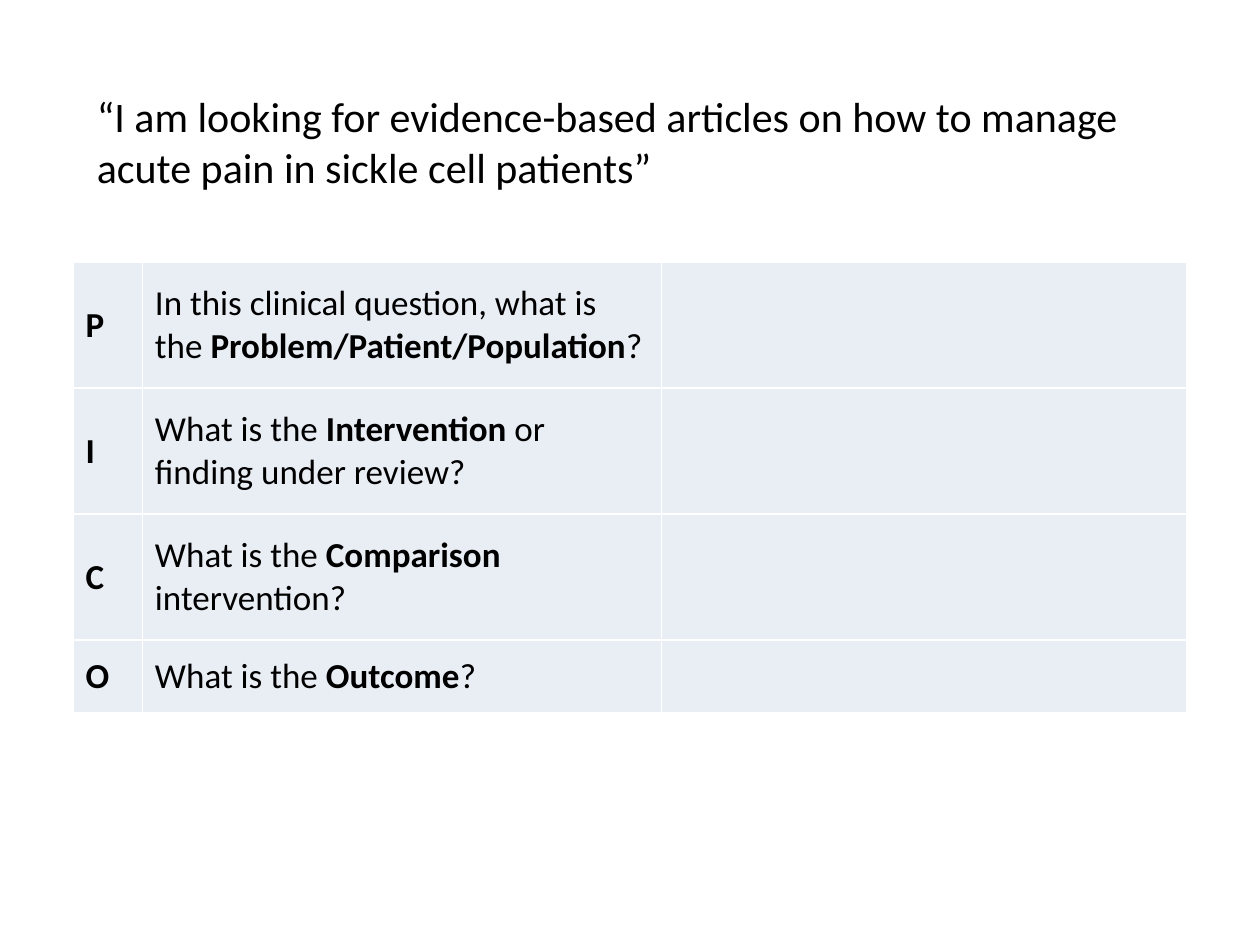
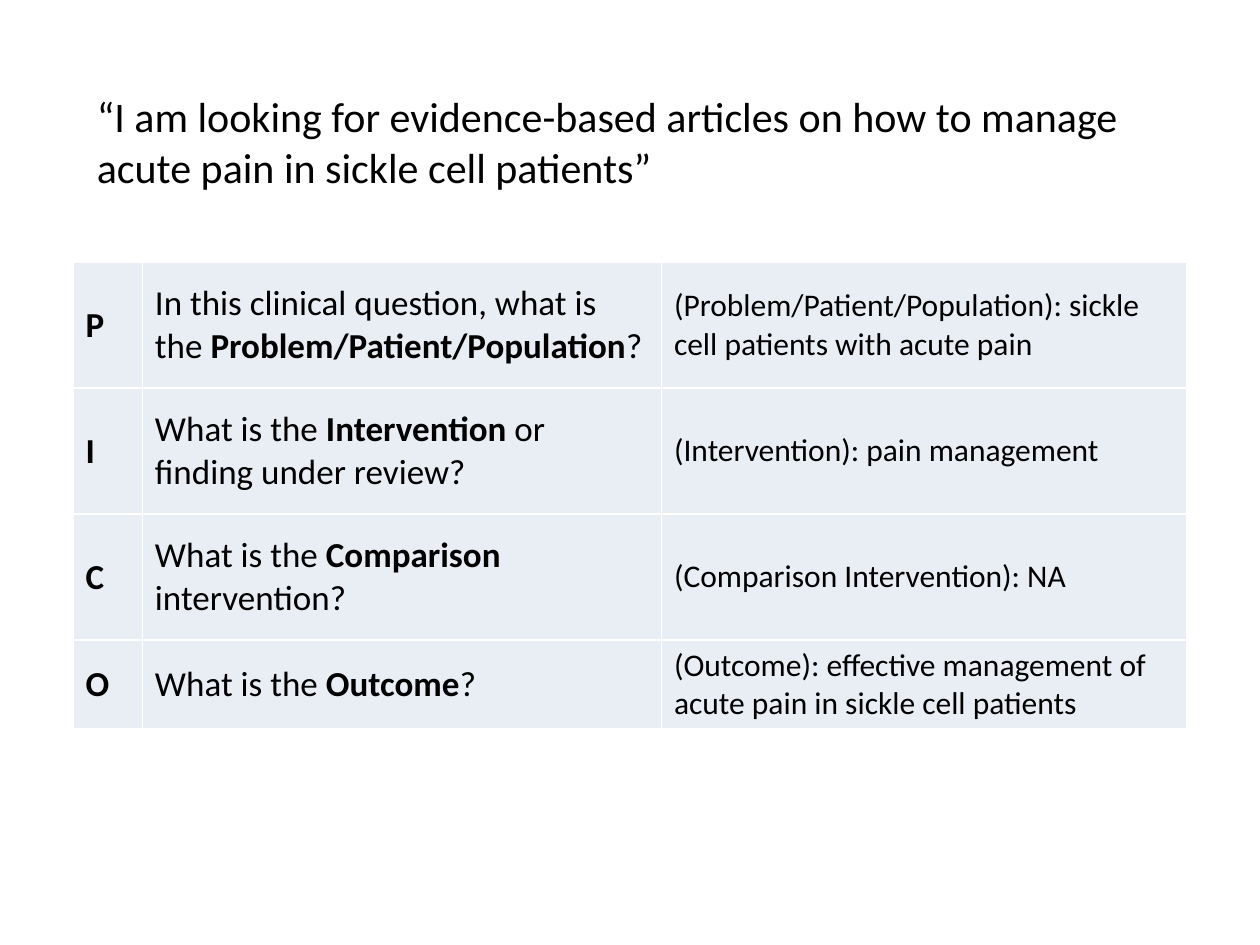
from lxml import etree
from pptx import Presentation
from pptx import util as u
from pptx.dml import color
from pptx.enum import text
from pptx.oxml import ns

BLACK = color.RGBColor(0x00, 0x00, 0x00)
WHITE = color.RGBColor(0xFF, 0xFF, 0xFF)
PALE_BLUE = color.RGBColor(0xE9, 0xED, 0xF4)
FONT = "Calibri"
QUOTE_SIZE, QUESTION_SIZE, ANSWER_SIZE = 24, 20, 18

QUOTE = ("“I am looking for evidence-based articles on how to manage "
         "acute pain in sickle cell patients”")
QUESTIONS = [
    ("P", "In this clinical question, what is the ", "Problem/Patient/Population", "?"),
    ("I", "What is the ", "Intervention", " or finding under review?"),
    ("C", "What is the ", "Comparison", " intervention?"),
    ("O", "What is the ", "Outcome", "?"),
]
ANSWERS = [
    "(Problem/Patient/Population): sickle cell patients with acute pain",
    "(Intervention): pain management",
    "(Comparison Intervention): NA",
    "(Outcome): effective management of acute pain in sickle cell patients",
]
COLUMN_WIDTHS = [0.55, 4.12, 4.17]
ROW_HEIGHTS = [1, 1, 1, 0.58]


def style_run(run, size, bold=False):
    """Give a run the shared font and colour."""
    run.font.name = FONT
    run.font.size = u.Pt(size)
    run.font.bold = bold
    run.font.color.rgb = BLACK


def add_quote(slide):
    """Add the quote above the table."""
    quote = slide.shapes.add_textbox(
        u.Inches(0.67), u.Inches(0.67), u.Inches(8.58), u.Inches(0.91))
    frame = quote.text_frame
    frame.word_wrap = True
    frame.auto_size = text.MSO_AUTO_SIZE.SHAPE_TO_FIT_TEXT
    frame.text = QUOTE
    style_run(frame.paragraphs[0].runs[0], QUOTE_SIZE)


def add_borders(cell):
    """Draw a thin white line on each side of a cell."""
    properties = cell._tc.get_or_add_tcPr()
    for side in ("a:lnL", "a:lnR", "a:lnT", "a:lnB"):
        line = etree.SubElement(properties, ns.qn(side), w=str(u.Pt(1)))
        fill = etree.SubElement(line, ns.qn("a:solidFill"))
        etree.SubElement(fill, ns.qn("a:srgbClr"), val=str(WHITE))


def fill_cell(cell, parts, size):
    """Style a cell and write its (wording, bold) parts."""
    add_borders(cell)
    cell.fill.solid()
    cell.fill.fore_color.rgb = PALE_BLUE
    cell.vertical_anchor = text.MSO_ANCHOR.MIDDLE
    for wording, bold in parts:
        run = cell.text_frame.paragraphs[0].add_run()
        run.text = wording
        style_run(run, size, bold)


def add_question_table(slide, answers):
    """Add the four questions with a column for their answers."""
    table = slide.shapes.add_table(
        len(ROW_HEIGHTS), len(COLUMN_WIDTHS), u.Inches(0.58), u.Inches(2.08),
        u.Inches(sum(COLUMN_WIDTHS)), u.Inches(sum(ROW_HEIGHTS))).table
    table.first_row = table.horz_banding = False
    for column, width in zip(table.columns, COLUMN_WIDTHS):
        column.width = u.Inches(width)
    for row, height, question, answer in zip(table.rows, ROW_HEIGHTS, QUESTIONS, answers):
        row.height = u.Inches(height)
        letter, opening, term, ending = question
        letter_cell, question_cell, answer_cell = row.cells
        fill_cell(letter_cell, [(letter, True)], QUESTION_SIZE)
        fill_cell(question_cell, [(opening, False), (term, True), (ending, False)],
                  QUESTION_SIZE)
        fill_cell(answer_cell, [(answer, False)] if answer else [], ANSWER_SIZE)


def main():
    """Build one slide without answers and one with them."""
    deck = Presentation()
    deck.slide_width, deck.slide_height = u.Inches(10), u.Inches(7.5)
    for answers in ([""] * len(QUESTIONS), ANSWERS):
        slide = deck.slides.add_slide(deck.slide_layouts[6])
        add_quote(slide)
        add_question_table(slide, answers)
    deck.save("out.pptx")


if __name__ == "__main__":
    main()
